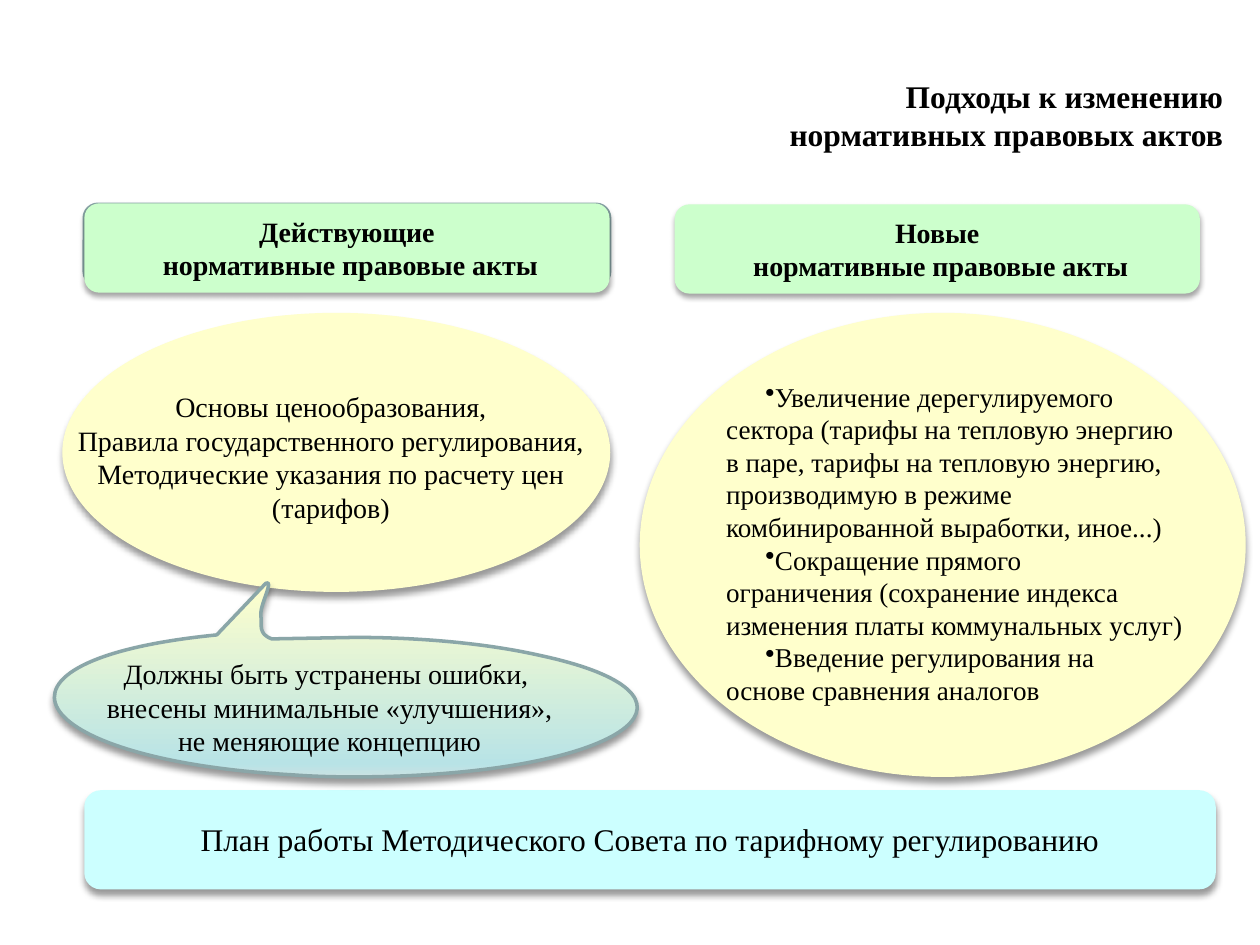
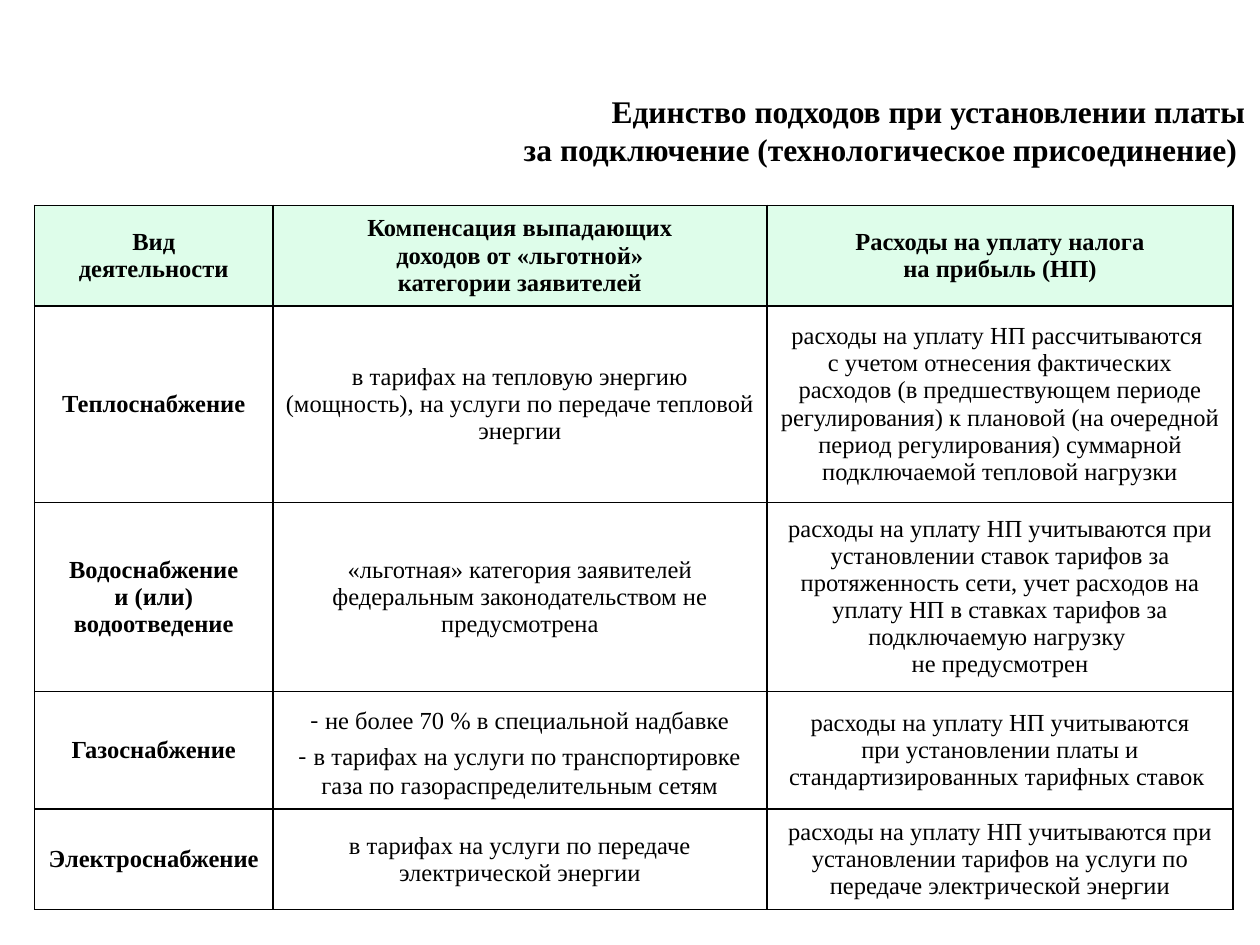
from copy import deepcopy
from dataclasses import dataclass

from lxml.etree import SubElement
from pptx import Presentation
from pptx.dml.color import RGBColor
from pptx.enum.shapes import MSO_SHAPE as Preset
from pptx.enum.text import MSO_ANCHOR as Anchor, MSO_AUTO_SIZE as AutoSize, PP_ALIGN as Align
from pptx.oxml.ns import qn
from pptx.util import Cm, Pt


@dataclass(frozen=True)
class Theme:
    font: str = "Times New Roman"
    dash_font: str = "Noto Sans CJK SC"
    text: str = "000000"
    header: str = "CCFFCC"
    oval: str = "FFFFCC"
    bar: str = "CCFFFF"
    backing: str = "BBE0E3"
    outline: str = "8AA6A8"
    table_header: str = "BFFDD7"
    callout_stops: tuple = ((0, "CBE1E2"), (0.07, "B8E3E6"), (1, "FFFFCC"))
    title_size: float = 18
    body_size: float = 16
    list_size: float = 15.5
    table_size: float = 14


THEME = Theme()
SOFT_SHADOW = (40, 4, 3)
LIGHT_SHADOW = (35, 3.1, 1.8)

CALLOUT_SIZE = (11.76, 3.91)
CALLOUT_START = (4.27, 0)
CALLOUT_SEGMENTS = [
    [(4.45, -0.1), (4.14, 0.46), (4.17, 0.64)],
    [(4.19, 0.84), (4.11, 1.02), (4.39, 1.12)],
    [(6.07, 1.09)],
    [(7.44, 1.09), (8.76, 1.22), (9.78, 1.45)],
    [(13.49, 2.24), (11.68, 3.73), (6.83, 3.89)],
    [(6.15, 3.91), (5.46, 3.91), (4.8, 3.86)],
    [(-0.61, 3.56), (-1.88, 1.55), (3.28, 1.04)],
]

COLUMN_WIDTHS = [4.8, 9.96, 9.4]
ROW_HEIGHTS = [2.03, 3.96, 3.81, 2.37, 2.03]
ROWS = [
    ("Вид\nдеятельности",
     "Компенсация выпадающих\nдоходов от «льготной»\nкатегории заявителей",
     "Расходы на уплату налога\nна прибыль (НП)"),
    ("Теплоснабжение",
     "в тарифах на тепловую энергию (мощность), на услуги по передаче тепловой энергии",
     "расходы на уплату НП рассчитываются \vс учетом отнесения фактических расходов "
     "(в предшествующем периоде регулирования) к плановой (на очередной период "
     "регулирования) суммарной подключаемой тепловой нагрузки"),
    ("Водоснабжение\nи (или) водоотведение",
     "«льготная» категория заявителей федеральным законодательством не предусмотрена",
     "расходы на уплату НП учитываются при установлении ставок тарифов за протяженность "
     "сети, учет расходов на уплату НП в ставках тарифов за подключаемую нагрузку "
     "\vне предусмотрен"),
    ("Газоснабжение",
     "- не более 70 % в специальной надбавке\n"
     "- в тарифах на услуги по транспортировке газа по газораспределительным сетям",
     "расходы на уплату НП учитываются\vпри установлении платы и "
     "стандартизированных тарифных ставок "),
    ("Электроснабжение",
     "в тарифах на услуги по передаче электрической энергии",
     "расходы на уплату НП учитываются при установлении тарифов на услуги по "
     "передаче электрической энергии"),
]


def color(value):
    return RGBColor.from_string(value)


def lengths(box):
    return [Cm(value) for value in box]


def style(paragraph, size, bold=False, align=Align.CENTER):
    paragraph.alignment = align
    font = paragraph.font
    font.name, font.size, font.bold = THEME.font, Pt(size), bold
    font.color.rgb = color(THEME.text)


def write(frame, text, size, bold=False, align=Align.CENTER, bullet=None):
    frame.word_wrap = True
    frame.text = text
    for paragraph in frame.paragraphs:
        if bullet:
            properties = paragraph._p.get_or_add_pPr()
            properties.set("marL", str(Cm(0.79)))
            properties.set("indent", str(Cm(0.79)))
            SubElement(properties, qn("a:buChar"), char=bullet)
        style(paragraph, size, bold, align)


def add_title(slide, box, text):
    title = slide.shapes.title
    title.left, title.top, title.width, title.height = lengths(box)
    frame = title.text_frame
    frame.vertical_anchor = Anchor.MIDDLE
    frame.auto_size = AutoSize.NONE
    write(frame, text, THEME.title_size, True, Align.RIGHT)


def add_label(slide, box, text, size, **options):
    frame = slide.shapes.add_textbox(*lengths(box)).text_frame
    write(frame, text, size, **options)


def set_line(shape, line_color, width):
    if line_color:
        shape.line.color.rgb = color(line_color)
        shape.line.width = Pt(width)
    else:
        shape.line.fill.background()


def set_shadow(shape, shadow):
    shape.shadow.inherit = False
    if shadow:
        alpha, blur, distance = shadow
        effects = shape._element.spPr.find(qn("a:effectLst"))
        outer = SubElement(effects, qn("a:outerShdw"), blurRad=str(Pt(blur)),
                           dist=str(Pt(distance)), dir="5400000", rotWithShape="0")
        tint = SubElement(outer, qn("a:srgbClr"), val="000000")
        SubElement(tint, qn("a:alpha"), val=str(alpha * 1000))


def add_panel(slide, preset, box, fill, line=None, width=0.75, shadow=None):
    panel = slide.shapes.add_shape(preset, *lengths(box))
    panel.fill.solid()
    panel.fill.fore_color.rgb = color(fill)
    set_line(panel, line, width)
    set_shadow(panel, shadow)
    return panel


def add_header(slide, left, top, text):
    header = add_panel(slide, Preset.ROUNDED_RECTANGLE, (left, top, 10.59, 1.8),
                       THEME.header, shadow=LIGHT_SHADOW)
    header.text_frame.vertical_anchor = Anchor.MIDDLE
    write(header.text_frame, text, THEME.body_size, True)


def add_oval(slide, box):
    add_panel(slide, Preset.OVAL, box, THEME.oval, line=THEME.oval, shadow=SOFT_SHADOW)


def add_curved_outline(slide, left, top):
    width, height = lengths(CALLOUT_SIZE)
    builder = slide.shapes.build_freeform(*lengths(CALLOUT_START))
    builder.add_line_segments([lengths(segment[-1]) for segment in CALLOUT_SEGMENTS])
    outline = builder.convert_to_shape()
    outline.left, outline.top, outline.width, outline.height = Cm(left), Cm(top), width, height
    geometry = next(outline._element.iter(qn("a:pathLst")))[0]
    geometry.set("w", str(width))
    geometry.set("h", str(height))
    for child in list(geometry):
        geometry.remove(child)
    for index, points in enumerate([[CALLOUT_START], *CALLOUT_SEGMENTS]):
        kind = "moveTo" if index == 0 else "lnTo" if len(points) == 1 else "cubicBezTo"
        command = SubElement(geometry, qn(f"a:{kind}"))
        for x, y in points:
            SubElement(command, qn("a:pt"), x=str(Cm(x)), y=str(Cm(y)))
    SubElement(geometry, qn("a:close"))
    return outline


def add_callout(slide, left, top, text):
    callout = add_curved_outline(slide, left, top)
    callout.fill.gradient()
    callout.fill.gradient_angle = 90
    stop_list = callout._element.spPr.find(qn("a:gradFill")).find(qn("a:gsLst"))
    stop_list.append(deepcopy(stop_list[-1]))
    for stop, (position, stop_color) in zip(callout.fill.gradient_stops, THEME.callout_stops):
        stop.position = position
        stop.color.rgb = color(stop_color)
    set_line(callout, THEME.outline, 2)
    set_shadow(callout, SOFT_SHADOW)
    add_label(slide, (left + 0.64, top + 1.35, 9.83, 2.31), text, THEME.body_size)


def add_plan_bar(slide, left, top):
    add_panel(slide, Preset.ROUNDED_RECTANGLE, (left, top, 22.81, 2),
              THEME.bar, shadow=SOFT_SHADOW)
    add_label(slide, (left + 0.02, top + 0.48, 22.77, 1.02),
              "План работы Методического Совета по тарифному регулированию", THEME.title_size)


def add_current_acts(slide, left, top):
    add_panel(slide, Preset.ROUNDED_RECTANGLE, (left + 0.43, top + 0.02, 10.59, 1.63),
              THEME.backing, line=THEME.outline, width=2)
    add_header(slide, left + 0.43, top, "Действующие\v нормативные правовые акты")
    add_oval(slide, (left, top + 2.22, 11.02, 5.6))
    add_label(slide, (left, top + 3.63, 10.8, 3),
              "Основы ценообразования,\vПравила государственного регулирования,\v"
              "Методические указания по расчету цен (тарифов)", THEME.body_size)
    add_callout(slide, left - 0.18, top + 7.66,
                "Должны быть устранены ошибки, \vвнесены минимальные «улучшения»,\v"
                "не меняющие концепцию")


def add_new_acts(slide, left, top):
    add_oval(slide, (left, top + 2.2, 12.19, 9.33))
    add_label(slide, (left + 0.69, top + 3.42, 10.59, 6.88),
              "Увеличение дерегулируемого сектора (тарифы на тепловую энергию "
              "в паре, тарифы на тепловую энергию, производимую в режиме "
              "комбинированной выработки, иное...)\n"
              "Сокращение прямого\vограничения (сохранение индекса "
              "изменения платы коммунальных услуг)\n"
              "Введение регулирования на\vоснове сравнения аналогов",
              THEME.list_size, align=Align.LEFT, bullet="•")
    add_header(slide, left + 0.69, top, "Новые\v нормативные правовые акты")


def set_borders(cell):
    properties = cell._tc.get_or_add_tcPr()
    for side in ("lnL", "lnR", "lnT", "lnB"):
        line = SubElement(properties, qn(f"a:{side}"), w=str(Pt(1)))
        fill = SubElement(line, qn("a:solidFill"))
        SubElement(fill, qn("a:srgbClr"), val=THEME.text)


def set_cell_fill(cell, is_header):
    if not is_header:
        cell.fill.background()
        return
    cell.fill.solid()
    cell.fill.fore_color.rgb = color(THEME.table_header)
    tint = cell._tc.tcPr.find(qn("a:solidFill")).find(qn("a:srgbClr"))
    SubElement(tint, qn("a:alpha"), val="50000")


def split_dash(paragraph):
    dash = paragraph.runs[0]
    rest = paragraph.add_run()
    rest.text = dash.text[1:]
    dash.text = "-"
    dash.font.name = THEME.dash_font


def add_payment_table(slide, left, top):
    box = (left, top, sum(COLUMN_WIDTHS), sum(ROW_HEIGHTS))
    table = slide.shapes.add_table(len(ROWS), len(COLUMN_WIDTHS), *lengths(box)).table
    table.first_row = table.horz_banding = False
    for column, width in zip(table.columns, COLUMN_WIDTHS):
        column.width = Cm(width)
    for row_index, (row, height, texts) in enumerate(zip(table.rows, ROW_HEIGHTS, ROWS)):
        row.height = Cm(height)
        for column_index, (cell, text) in enumerate(zip(row.cells, texts)):
            cell.vertical_anchor = Anchor.MIDDLE
            set_borders(cell)
            set_cell_fill(cell, row_index == 0)
            cell.text = text
            for paragraph in cell.text_frame.paragraphs:
                style(paragraph, THEME.table_size, row_index == 0 or column_index == 0)
                if paragraph.text.startswith("-"):
                    split_dash(paragraph)


def build_approaches(slide):
    add_title(slide, (12.9, 0.92, 12.01, 2.79), "Подходы к изменению\vнормативных правовых актов")
    add_plan_bar(slide, 1.7, 15.93)
    add_current_acts(slide, 1.27, 4.1)
    add_new_acts(slide, 12.91, 4.12)


def build_connection_payment(slide):
    add_title(slide, (10.04, 1.72, 15.32, 1.8),
              "Единство подходов при установлении платы\v"
              " за подключение (технологическое присоединение) ")
    add_payment_table(slide, 0.7, 4.14)


def main():
    presentation = Presentation()
    presentation.slide_width, presentation.slide_height = Cm(25.4), Cm(19.05)
    for build in (build_approaches, build_connection_payment):
        build(presentation.slides.add_slide(presentation.slide_layouts[5]))
    presentation.save("out.pptx")


if __name__ == "__main__":
    main()
